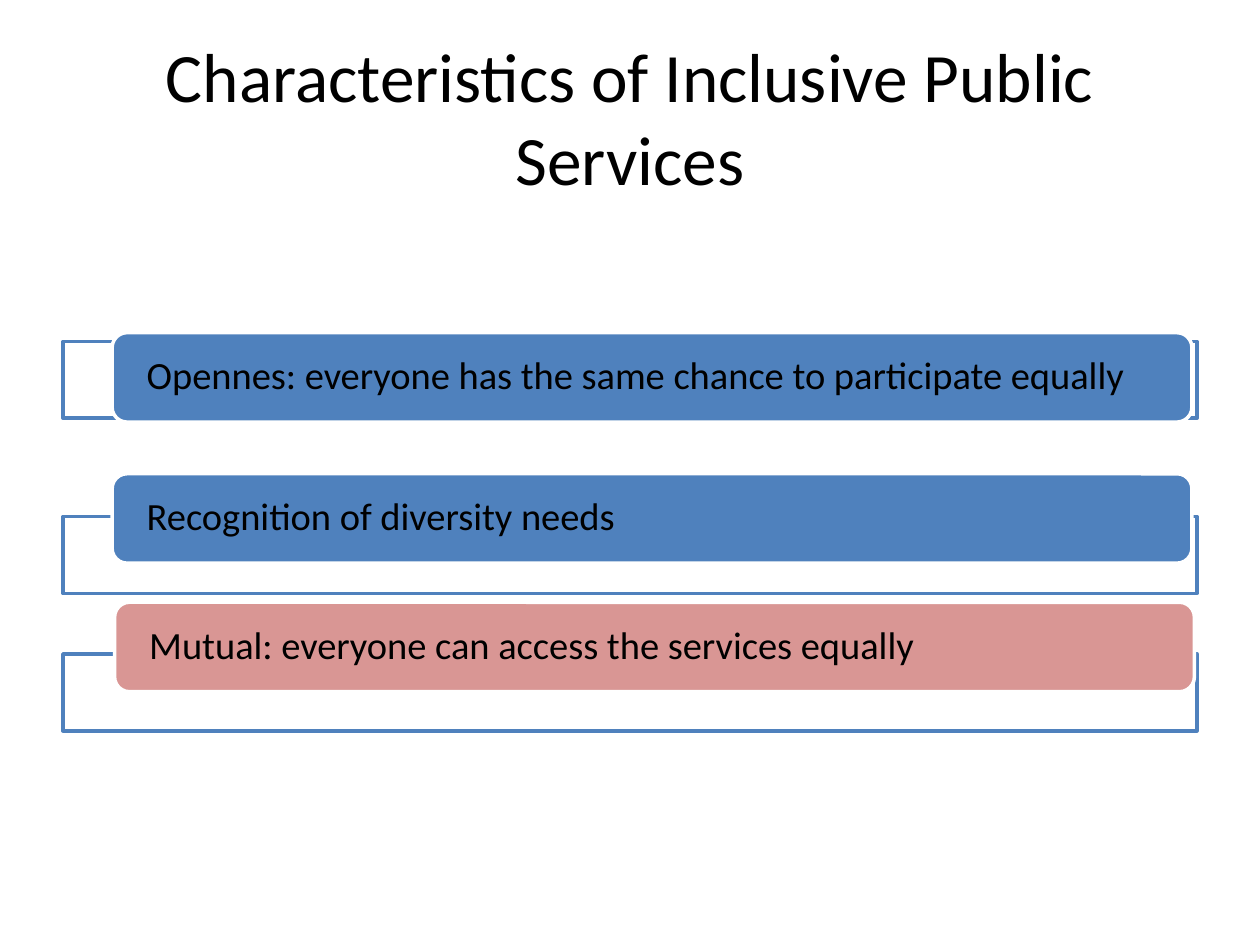
from lxml import etree
from pptx import Presentation, util as u
from pptx.dml.color import RGBColor
from pptx.enum import shapes, text
from pptx.oxml.ns import qn

BLACK = RGBColor(0x00, 0x00, 0x00)
WHITE = RGBColor(0xFF, 0xFF, 0xFF)
BLUE = RGBColor(0x4F, 0x81, 0xBD)
ROSE = RGBColor(0xD9, 0x96, 0x94)
FONT = "Calibri"

TITLE = "Characteristics of Inclusive Public Services"
# wording, label colour, frame top, label left, label top (inches)
ITEMS = [
    ("Opennes: everyone has the same chance to participate equally", BLUE, 2.71, 0.89, 2.64),
    ("Recognition of diversity needs", BLUE, 4.1, 0.89, 3.76),
    ("Mutual: everyone can access the services equally", ROSE, 5.19, 0.91, 4.78),
]
WIDTH, HEIGHT = 10, 7.5
MARGIN = WIDTH * 0.05
CONTENT_WIDTH = WIDTH - 2 * MARGIN
FRAME_HEIGHT = 0.61
LABEL_WIDTH, LABEL_HEIGHT = 8.57, 0.71
LABEL_INSET = 0.24


def place(shape, left, top, width, height):
    shape.left, shape.top = u.Inches(left), u.Inches(top)
    shape.width, shape.height = u.Inches(width), u.Inches(height)


def add_box(slide, kind, bounds, fill, line):
    box = slide.shapes.add_shape(kind, *map(u.Inches, bounds))
    box.shadow.inherit = False
    box.fill.solid()
    box.fill.fore_color.rgb = fill
    box.line.color.rgb = line
    box.line.width = u.Pt(2)
    return box


def set_opacity(shape, percent):
    color = shape.fill._xPr.find(qn("a:solidFill"))[0]
    etree.SubElement(color, qn("a:alpha"), val=str(percent * 1000))


def write(shape, wording, size, align):
    frame = shape.text_frame
    frame.word_wrap = True
    frame.vertical_anchor = text.MSO_ANCHOR.MIDDLE
    para = frame.paragraphs[0]
    para.text = wording
    para.alignment = align
    para.font.name, para.font.size = FONT, u.Pt(size)
    para.font.color.rgb = BLACK
    return para


def add_item(slide, wording, color, frame_top, label_left, label_top):
    outline = add_box(slide, shapes.MSO_SHAPE.RECTANGLE,
                      (MARGIN, frame_top, CONTENT_WIDTH, FRAME_HEIGHT), WHITE, BLUE)
    set_opacity(outline, 90)
    label = add_box(slide, shapes.MSO_SHAPE.ROUNDED_RECTANGLE,
                    (label_left, label_top, LABEL_WIDTH, LABEL_HEIGHT), color, WHITE)
    frame = label.text_frame
    frame.margin_left = frame.margin_right = u.Inches(LABEL_INSET)
    frame.margin_top = frame.margin_bottom = 0
    para = write(label, wording, 22, text.PP_ALIGN.LEFT)
    para.line_spacing = 0.9


def main():
    deck = Presentation()
    deck.slide_width, deck.slide_height = u.Inches(WIDTH), u.Inches(HEIGHT)
    slide = deck.slides.add_slide(deck.slide_layouts[5])
    title = slide.shapes.title
    place(title, MARGIN, HEIGHT * 0.04, CONTENT_WIDTH, 1.25)
    write(title, TITLE, 39.6, text.PP_ALIGN.CENTER)
    for item in ITEMS:
        add_item(slide, *item)
    deck.save("out.pptx")


if __name__ == "__main__":
    main()
